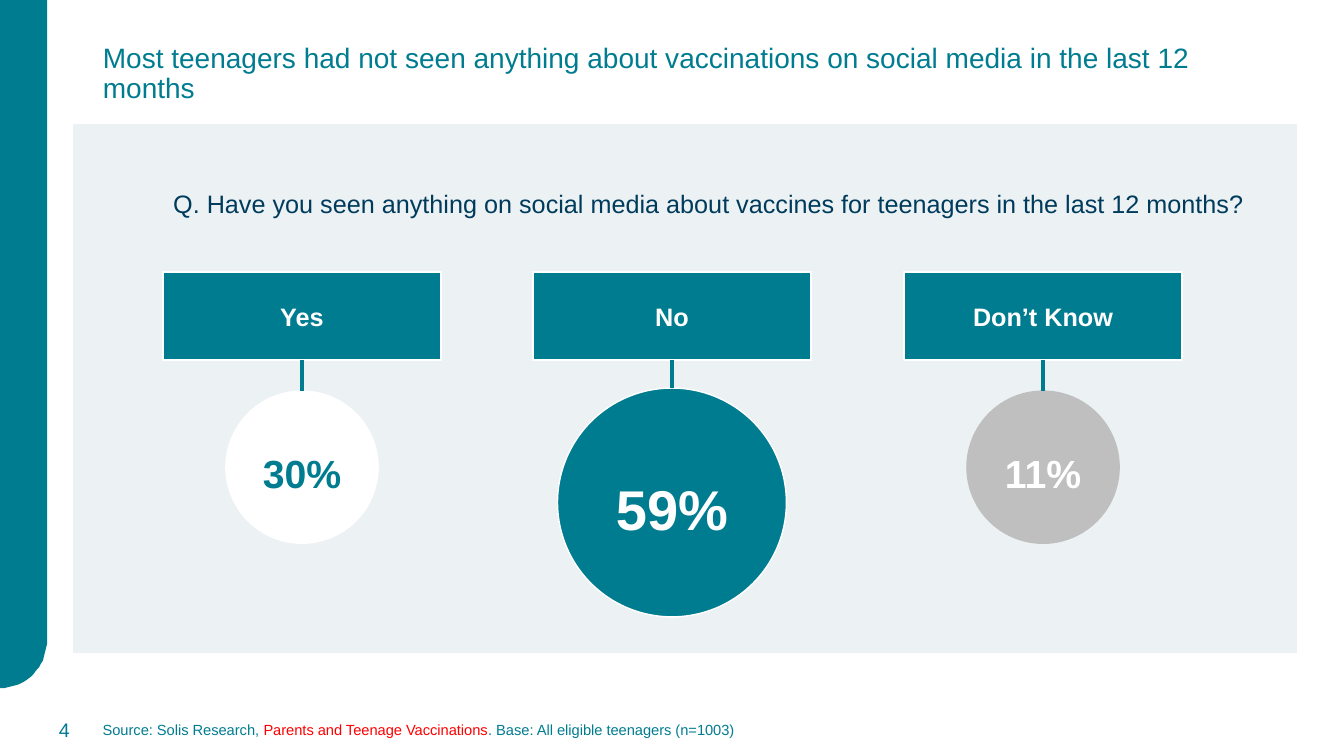
import math

from lxml import etree
from pptx import Presentation
from pptx import util as u
from pptx.dml.color import RGBColor
from pptx.enum import shapes, text
from pptx.oxml.ns import qn

PX = 9144
COLORS = {
    "teal": "007C91",
    "navy": "003B5C",
    "red": "FF0000",
    "white": "FFFFFF",
    "panel": "ECF1F4",
    "grey": "BFBFBF",
}
ANSWERS = [
    ("Yes", "30%", 388, 151, 28, "white", "white", "teal"),
    ("No", "59%", 385, 227, 40, "teal", "white", "white"),
    ("Don’t Know", "11%", 388, 151, 28, "grey", "grey", "white"),
]
ALIGN = text.PP_ALIGN
SHAPE = shapes.MSO_SHAPE


class SlideBuilder:
    """Hold the slide and its style, and add each kind of element."""

    def __init__(self, slide, font="Arial"):
        self.slide = slide
        self.font = font

    def color(self, name):
        return RGBColor.from_string(COLORS[name])

    def fill_text(self, sp, runs, size, align=ALIGN.LEFT, bold=False):
        tf = sp.text_frame
        tf.word_wrap = True
        tf.auto_size = text.MSO_AUTO_SIZE.NONE
        tf.vertical_anchor = text.MSO_ANCHOR.MIDDLE
        p = tf.paragraphs[0]
        p.alignment = align
        for words, color in runs:
            r = p.add_run()
            r.text = words
            r.font.name = self.font
            r.font.size = u.Pt(size)
            r.font.bold = bold
            r.font.color.rgb = self.color(color)
        return p

    def paint(self, sp, fill, line, width):
        sp.shadow.inherit = False
        sp.fill.solid()
        sp.fill.fore_color.rgb = self.color(fill)
        sp.line.color.rgb = self.color(line)
        sp.line.width = u.Pt(width)

    def title(self, box, words, size):
        sp = self.slide.shapes.title
        sp.left, sp.top, sp.width, sp.height = (v * PX for v in box)
        p = self.fill_text(sp, [(words, "teal")], size)
        p.line_spacing = 0.9

    def label(self, box, runs, size, align=ALIGN.LEFT):
        sp = self.slide.shapes.add_textbox(*(v * PX for v in box))
        self.fill_text(sp, runs, size, align)

    def shape(self, kind, box, fill, line, width):
        sp = self.slide.shapes.add_shape(kind, *(v * PX for v in box))
        self.paint(sp, fill, line, width)
        return sp

    def side_bar(self, width, straight, radius):
        angles = [math.radians(a) for a in range(0, 91, 5)]
        arc = [(round(width * math.cos(a), 2), round(straight + radius * math.sin(a), 2)) for a in angles]
        fb = self.slide.shapes.build_freeform(0, 0, scale=PX)
        fb.add_line_segments([(width, 0)] + arc, close=True)
        self.paint(fb.convert_to_shape(), "teal", "teal", 1)

    def connect(self, upper, lower):
        line = self.slide.shapes.add_connector(shapes.MSO_CONNECTOR.STRAIGHT, 0, 0, 0, 0)
        line.begin_connect(upper, 2)
        line.end_connect(lower, 0)
        line.line.color.rgb = self.color("teal")
        line.line.width = u.Pt(3)
        etree.SubElement(line._element.spPr, qn("a:effectLst"))

    def answer(self, left, name, share, top, size, pt, fill, line, ink):
        width = 275
        box = self.shape(SHAPE.RECTANGLE, (left, 270, width, 87), "teal", "white", 1.5)
        self.fill_text(box, [(name, "white")], 18, ALIGN.CENTER, True)
        circle = self.shape(SHAPE.OVAL, (left + (width - size) // 2, top, size, size), fill, line, 1)
        self.fill_text(circle, [(share, ink)], pt, ALIGN.CENTER, True)
        circle.text_frame.margin_top = 16 * PX
        self.connect(box, circle)


def main():
    prs = Presentation()
    prs.slide_width, prs.slide_height = 1333 * PX, 750 * PX
    s = SlideBuilder(prs.slides.add_slide(prs.slide_layouts[5]))
    s.side_bar(46, 635, 47)
    s.title(
        (92, 1, 1150, 145),
        "Most teenagers had not seen anything about vaccinations on social media in the last 12 months",
        20,
    )
    source = [
        ("Source: Solis Research, ", "teal"),
        ("Parents and Teenage Vaccinations", "red"),
        (". Base: All eligible teenagers (n=1003)", "teal"),
    ]
    s.label((92, 704, 1160, 40), source, 10.5)
    s.label((14, 704, 65, 40), [("4", "teal")], 14, ALIGN.RIGHT)
    s.shape(SHAPE.RECTANGLE, (71, 122, 1217, 527), "panel", "white", 1.5)
    for i, answer in enumerate(ANSWERS):
        s.answer(162 + 735 * i // 2, *answer)
    question = "Q. Have you seen anything on social media about vaccines for teenagers in the last 12 months?"
    s.label((162, 182, 1113, 40), [(question, "navy")], 18)
    prs.save("out.pptx")


if __name__ == "__main__":
    main()
